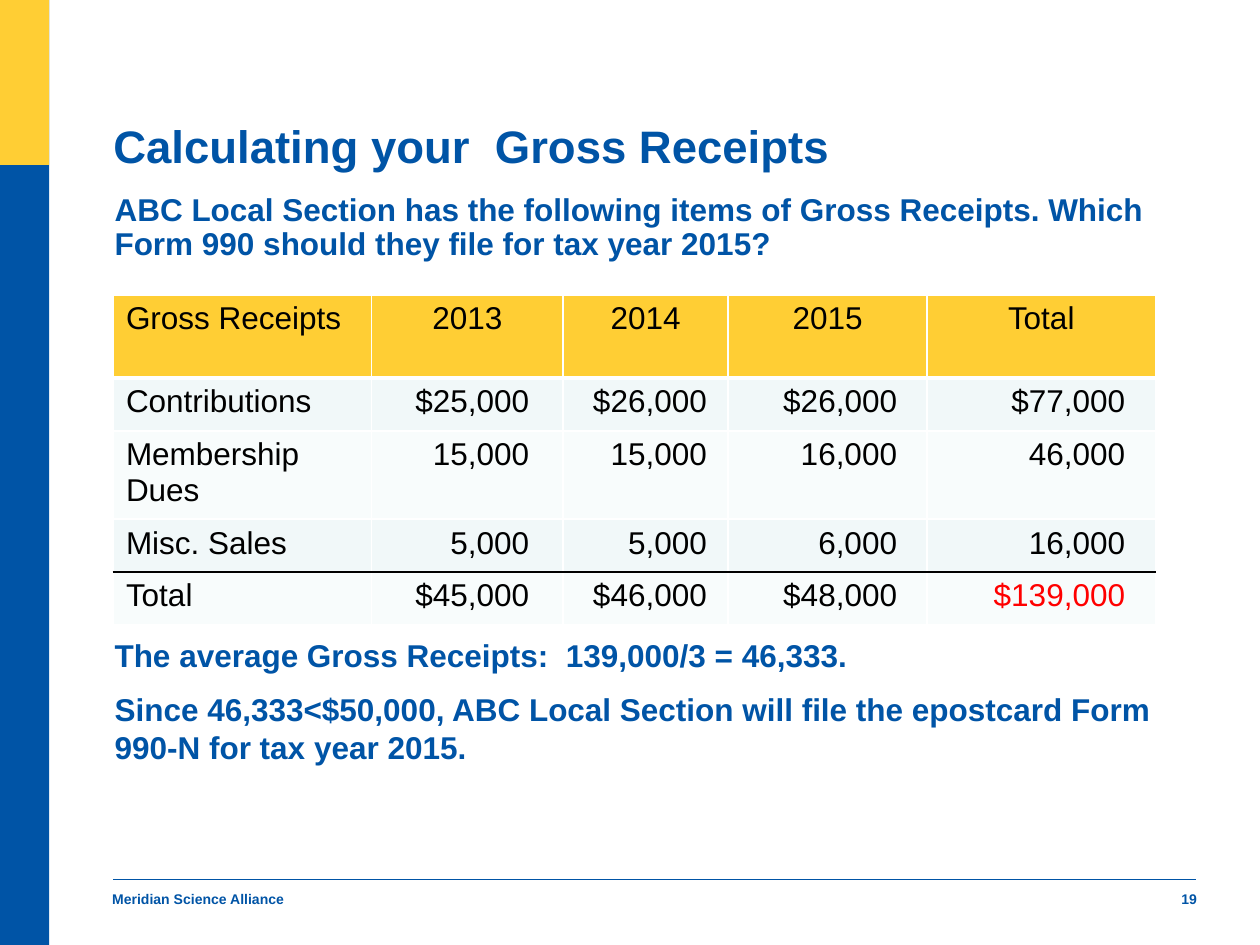
import pptx
import pptx.util
import pptx.dml.color
import pptx.enum.shapes
import pptx.enum.text
import pptx.oxml
import pptx.oxml.ns
import lxml.etree

Inches = pptx.util.Inches
Pt = pptx.util.Pt
RGBColor = pptx.dml.color.RGBColor
ALIGN = pptx.enum.text.PP_ALIGN
ANCHOR = pptx.enum.text.MSO_ANCHOR

BLUE = RGBColor(0x00, 0x54, 0xA6)
GOLD = RGBColor(0xFF, 0xCE, 0x34)
MINT = RGBColor(0xF1, 0xF8, 0xF9)
PALE = RGBColor(0xF8, 0xFC, 0xFC)
WHITE = RGBColor(0xFF, 0xFF, 0xFF)
BLACK = RGBColor(0x00, 0x00, 0x00)
RED = RGBColor(0xFF, 0x00, 0x00)

COLS = [2.05, 1.52, 1.31, 1.58, 1.81]
ROWS = [0.66, 0.42, 0.7, 0.42, 0.42]
RIGHT_MARGINS = [0.1, 0.27, 0.17, 0.24, 0.24]
RECEIPTS = [
    ["Gross Receipts", "2013", "2014", "2015", "Total"],
    ["Contributions", "$25,000", "$26,000", "$26,000", "$77,000"],
    ["Membership Dues", "15,000", "15,000", "16,000", "46,000"],
    ["Misc. Sales", "5,000", "5,000", "6,000", "16,000"],
    ["Total", "$45,000", "$46,000", "$48,000", "$139,000"],
]


def add_run(p, text, size, color, bold):
    r = p.add_run()
    r.text = text
    font = {"name": "Arial", "size": Pt(size), "bold": bold}
    for name, value in font.items():
        setattr(r.font, name, value)
    r.font.color.rgb = color


def add_text(s, box, paragraphs, size, anchor=ANCHOR.TOP, **fmt):
    tf = s.shapes.add_textbox(*map(Inches, box)).text_frame
    frame = dict.fromkeys(
        ["margin_left", "margin_top", "margin_right", "margin_bottom"], 0)
    frame.update(word_wrap=True, vertical_anchor=anchor)
    for name, value in frame.items():
        setattr(tf, name, value)
    for i, text in enumerate(paragraphs):
        p = tf.add_paragraph() if i else tf.paragraphs[0]
        for name, value in fmt.items():
            if i or name != "space_before":
                setattr(p, name, value)
        add_run(p, text, size, BLUE, True)


def add_bar(s, height, color):
    sp = s.shapes.add_shape(pptx.enum.shapes.MSO_SHAPE.RECTANGLE,
                            0, 0, Inches(0.39), Inches(height))
    sp.shadow.inherit = False
    sp.fill.solid()
    sp.fill.fore_color.rgb = color
    sp.line.fill.background()


def add_rule(s, left, right, y):
    line = s.shapes.add_connector(
        pptx.enum.shapes.MSO_CONNECTOR.STRAIGHT,
        Inches(left), Inches(y), Inches(right), Inches(y))
    line.line.color.rgb = BLUE
    line.line.width = Pt(0.75)
    lxml.etree.SubElement(line._element.spPr, pptx.oxml.ns.qn("a:effectLst"))


def set_borders(cell, borders):
    tcPr = cell._tc.get_or_add_tcPr()
    for i, (side, (color, width)) in enumerate(borders.items()):
        tcPr.insert(i, pptx.oxml.parse_xml(
            f'<a:ln{side} {pptx.oxml.ns.nsdecls("a")} w="{Pt(width)}">'
            f'<a:solidFill><a:srgbClr val="{color}"/></a:solidFill>'
            f'</a:ln{side}>'))


def add_receipts_table(s):
    table = s.shapes.add_table(
        len(ROWS), len(COLS), Inches(0.9), Inches(2.34),
        Inches(sum(COLS)), Inches(sum(ROWS))).table
    for column, width in zip(table.columns, COLS):
        column.width = Inches(width)
    for row, height in zip(table.rows, ROWS):
        row.height = Inches(height)
    last = len(ROWS) - 1
    edges = {0: (WHITE, 1), 1: (WHITE, 3), last: (BLACK, 1)}
    for i, values in enumerate(RECEIPTS):
        fill = GOLD if i == 0 else MINT if i % 2 else PALE
        for j, text in enumerate(values):
            cell = table.cell(i, j)
            cell.fill.solid()
            cell.fill.fore_color.rgb = fill
            p = cell.text_frame.paragraphs[0]
            if j and i:
                p.alignment = ALIGN.RIGHT
                cell.margin_right = Inches(RIGHT_MARGINS[j])
            elif j:
                p.alignment = ALIGN.CENTER
            grand_total = i == last and j == len(COLS) - 1
            add_run(p, text, 18, RED if grand_total else BLACK, False)
            set_borders(cell, {
                "L": (WHITE, 1), "R": (WHITE, 1),
                "T": edges.get(i, (WHITE, 1)),
                "B": edges.get(i + 1, (WHITE, 1)),
            })


def main():
    prs = pptx.Presentation()
    prs.slide_width = Inches(10)
    prs.slide_height = Inches(7.5)
    s = prs.slides.add_slide(prs.slide_layouts[6])
    add_bar(s, 7.5, BLUE)
    add_bar(s, 1.31, GOLD)
    add_rule(s, 0.9, 9.49, 6.98)
    add_text(s, (0.9, 0.35, 6.14, 1.03), ["Calculating your  Gross Receipts"],
             26, ANCHOR.BOTTOM, line_spacing=0.9)
    add_text(s, (0.91, 1.54, 8.27, 0.6),
             ["ABC Local Section has the following items of Gross Receipts. "
              "Which Form 990 should they file for tax year 2015?"],
             18, line_spacing=0.9)
    add_text(s, (0.91, 5.05, 8.27, 1.1),
             ["The average Gross Receipts:  139,000/3 = 46,333.",
              "Since 46,333<$50,000, ABC Local Section will file the "
              "epostcard Form 990-N for tax year 2015."],
             18, space_before=Pt(9))
    add_text(s, (0.89, 7.07, 3.17, 0.31), ["Meridian Science Alliance"], 8)
    add_text(s, (7.56, 7.07, 1.94, 0.32), ["19"], 8, alignment=ALIGN.RIGHT)
    add_receipts_table(s)
    prs.save("out.pptx")


if __name__ == "__main__":
    main()
